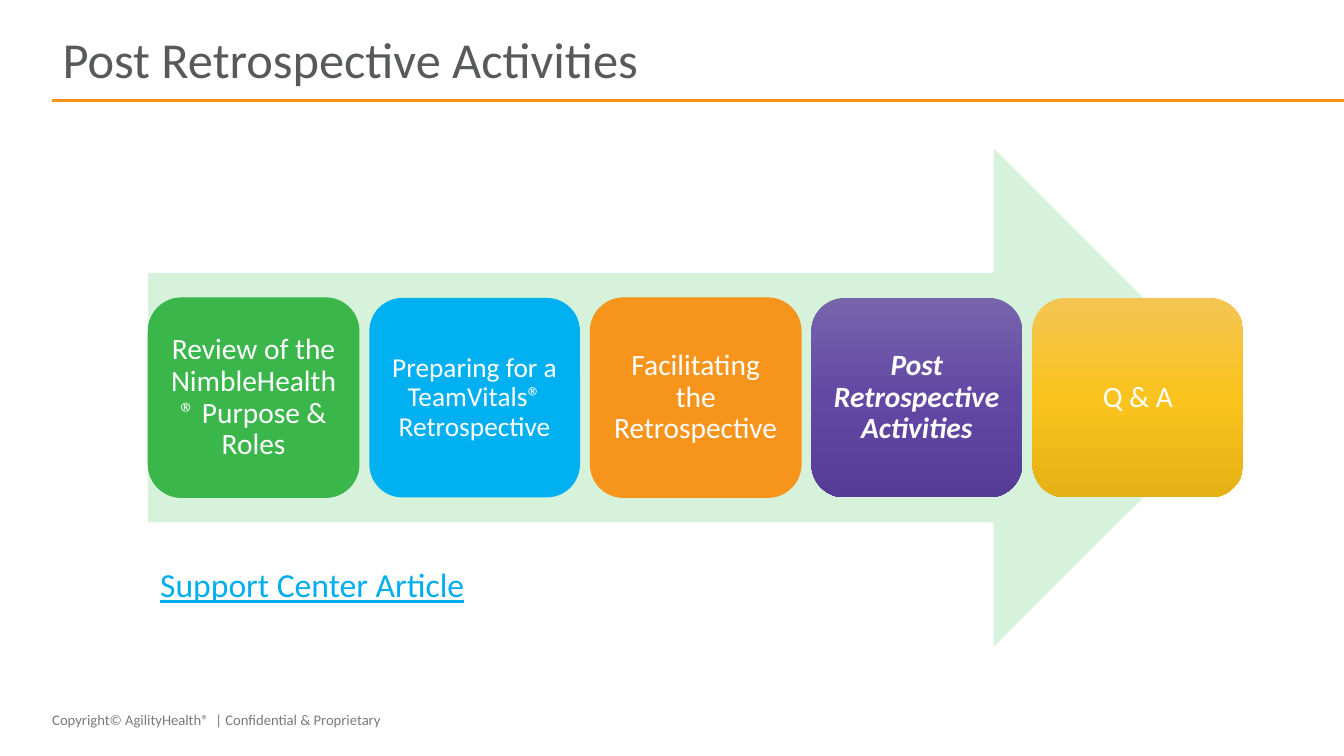
from copy import deepcopy
from lxml.etree import SubElement
from pptx import Presentation
from pptx.dml.color import RGBColor
from pptx.enum.shapes import MSO_CONNECTOR, MSO_SHAPE
from pptx.enum.text import MSO_ANCHOR, MSO_AUTO_SIZE, PP_ALIGN
from pptx.oxml.ns import qn
from pptx.util import Inches, Pt

WHITE = RGBColor(0xFF, 0xFF, 0xFF)
DARK = RGBColor(0x58, 0x59, 0x5B)
GRAY = RGBColor(0x7A, 0x7A, 0x7A)
MINT = RGBColor(0xD6, 0xF2, 0xDA)
GREEN = RGBColor(0x3A, 0xB6, 0x4B)
BLUE = RGBColor(0x00, 0xB0, 0xF0)
CYAN = RGBColor(0x00, 0xAE, 0xEF)
ORANGE = RGBColor(0xF7, 0x94, 0x1C)
PURPLE = [RGBColor(0x77, 0x65, 0xAC), RGBColor(0x62, 0x48, 0xA4), RGBColor(0x56, 0x3C, 0x96)]
GOLD = [RGBColor(0xF4, 0xC5, 0x53), RGBColor(0xFA, 0xC3, 0x1E), RGBColor(0xE5, 0xB1, 0x14)]

TITLE = "Post Retrospective Activities"
LINK = "Support Center Article"
FOOTER = "Copyright© AgilityHealth®  | Confidential & Proprietary"
STEPS = [
    {"text": "Review of the NimbleHealth® Purpose & Roles", "fill": [GREEN], "edge": True},
    {"text": "Preparing for a TeamVitals® Retrospective", "fill": [BLUE], "size": 19.5, "inset": 0.08},
    {"text": "Facilitating the Retrospective", "fill": [ORANGE], "edge": True},
    {"text": "Post Retrospective Activities", "fill": PURPLE, "strong": True},
    {"text": "Q & A", "fill": GOLD},
]

LEFT, TOP, WIDTH, HEIGHT = 1.47, 1.47, 10.86, 4.95
BOX_W, BOX_H = 2.09, 1.98
PITCH = (WIDTH - BOX_W) / (len(STEPS) - 1)
BOX_TOP = TOP + (HEIGHT - BOX_H) / 2


def write(shape, text, size=21, color=WHITE, align=PP_ALIGN.LEFT, anchor=MSO_ANCHOR.TOP,
          space=1.0, inset=None, wrap=True, fit=MSO_AUTO_SIZE.NONE,
          bold=False, slant=False, under=False):
    frame = shape.text_frame
    frame.text = text
    frame.word_wrap = wrap
    frame.auto_size = fit
    frame.vertical_anchor = anchor
    if inset is not None:
        frame.margin_left = frame.margin_right = Inches(inset)
        frame.margin_top = frame.margin_bottom = Inches(inset)
    para = frame.paragraphs[0]
    para.alignment = align
    para.line_spacing = space
    font = para.runs[0].font
    font.name, font.size, font.color.rgb = "Calibri", Pt(size), color
    font.bold, font.italic, font.underline = bold, slant, under


def paint(shape, tones):
    if len(tones) == 1:
        shape.fill.solid()
        shape.fill.fore_color.rgb = tones[0]
        return
    shape.fill.gradient()
    shape.fill.gradient_angle = 270
    stops = shape._element.spPr.find(qn("a:gradFill")).find(qn("a:gsLst"))
    stops.append(deepcopy(stops[0]))
    for i, (stop, tone) in enumerate(zip(shape.fill.gradient_stops, tones)):
        stop.position = i / (len(tones) - 1)
        stop.color.rgb = tone


def draw(slide, kind, x, y, w, h, tones, edge=False):
    shape = slide.shapes.add_shape(kind, Inches(x), Inches(y), Inches(w), Inches(h))
    shape.shadow.inherit = False
    paint(shape, tones)
    if edge:
        shape.line.color.rgb = tones[0]
        shape.line.width = Pt(0.75)
    else:
        shape.line.fill.background()
    return shape


def main():
    deck = Presentation()
    deck.slide_width, deck.slide_height = Inches(13.33), Inches(7.5)
    slide = deck.slides.add_slide(deck.slide_layouts[5])
    shapes = slide.shapes

    title = shapes.title
    title.left, title.top = Inches(0.52), Inches(0.27)
    title.width, title.height = Inches(12.29), Inches(0.7)
    write(title, TITLE, size=36, color=DARK, anchor=MSO_ANCHOR.MIDDLE, space=0.9)

    foot = shapes.add_textbox(Inches(0.42), Inches(7), Inches(4.5), Inches(0.28))
    write(foot, FOOTER, size=10.5, color=GRAY, fit=MSO_AUTO_SIZE.SHAPE_TO_FIT_TEXT)

    rule = shapes.add_connector(MSO_CONNECTOR.STRAIGHT, Inches(0.52), Inches(1), Inches(13.33), Inches(1))
    rule.line.color.rgb = ORANGE
    rule.line.width = Pt(2)
    SubElement(rule._element.spPr, qn("a:effectLst"))

    draw(slide, MSO_SHAPE.RIGHT_ARROW, LEFT, TOP, WIDTH, HEIGHT, [MINT])
    for i, step in enumerate(STEPS):
        box = draw(slide, MSO_SHAPE.ROUNDED_RECTANGLE, LEFT + i * PITCH, BOX_TOP,
                   BOX_W, BOX_H, step["fill"], step.get("edge", False))
        strong = step.get("strong", False)
        write(box, step["text"], size=step.get("size", 21), align=PP_ALIGN.CENTER,
              anchor=MSO_ANCHOR.MIDDLE, space=0.9, inset=step.get("inset", 0.09),
              bold=strong, slant=strong)

    link = shapes.add_textbox(Inches(1.49), Inches(5.55), Inches(3.25), Inches(0.5))
    write(link, LINK, size=24, color=CYAN, wrap=False,
          fit=MSO_AUTO_SIZE.SHAPE_TO_FIT_TEXT, under=True)
    deck.save("out.pptx")


if __name__ == "__main__":
    main()
